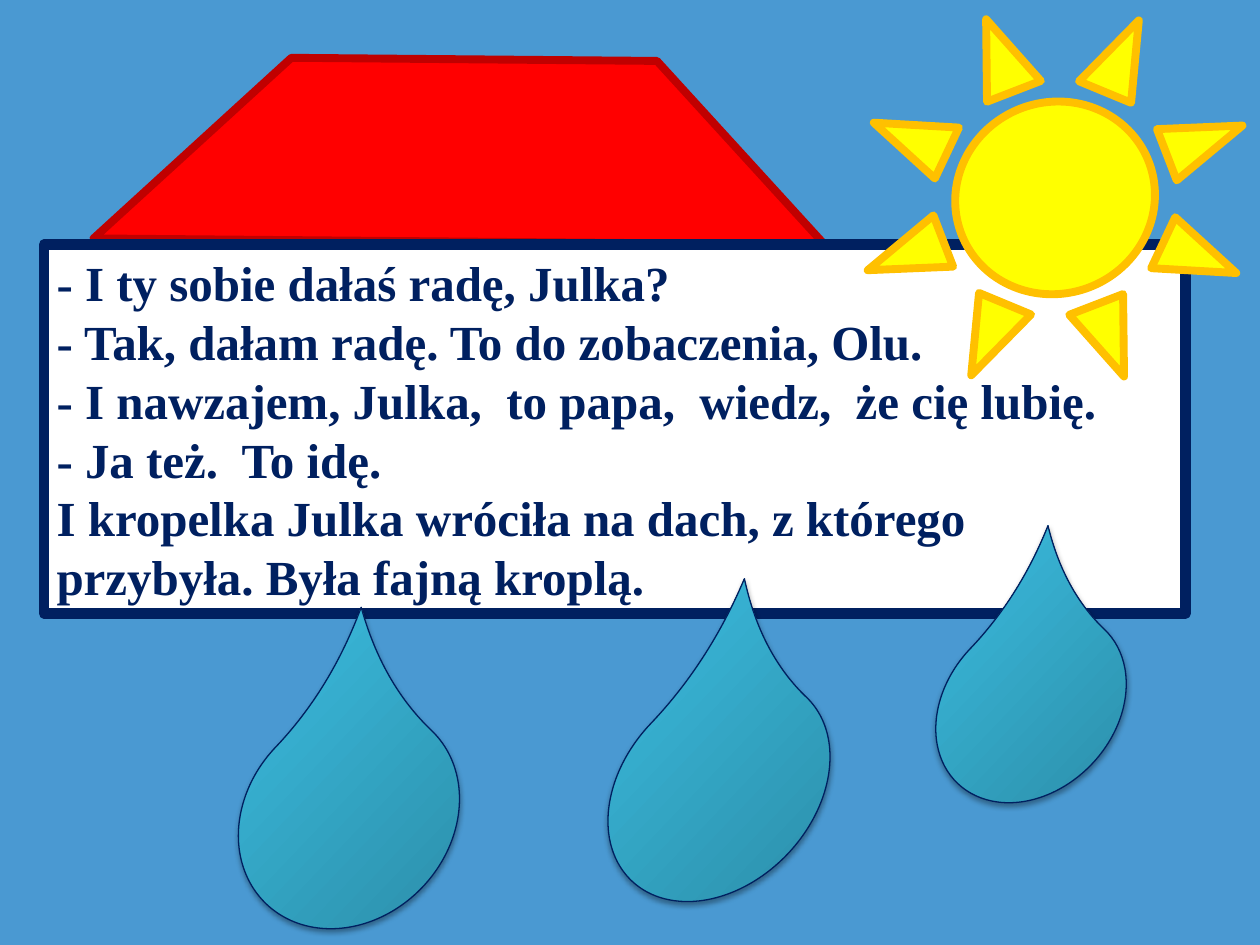
"""Build a slide with a roofed text box, three raindrops and a sun."""
from copy import deepcopy
from typing import NamedTuple

from lxml import etree
from pptx import Presentation
from pptx.dml.color import RGBColor
from pptx.enum.shapes import MSO_SHAPE
from pptx.enum.text import MSO_ANCHOR, MSO_AUTO_SIZE, PP_ALIGN
from pptx.oxml.ns import qn
from pptx.util import Cm, Pt

STRIPE, RECT = MSO_SHAPE.DIAGONAL_STRIPE, MSO_SHAPE.RECTANGLE
TEAR, SUN = MSO_SHAPE.TEAR, MSO_SHAPE.SUN
LEFT, MIDDLE = PP_ALIGN.LEFT, MSO_ANCHOR.MIDDLE
GROW = MSO_AUTO_SIZE.SHAPE_TO_FIT_TEXT

SKY, NAVY, WHITE = "4A99D2", "002060", "FFFFFF"
WATER = [(0, "2A88A2"), (0.8, "37B1D2"), (1, "34B4D6")]
TALK = [
    "- I ty sobie dałaś radę, Julka?",
    "- Tak, dałam radę. To do zobaczenia, Olu.",
    "- I nawzajem, Julka,  to papa,  wiedz,  że cię lubię.",
    "- Ja też.  To idę.",
    "I kropelka Julka wróciła na dach, z którego przybyła. Była fajną kroplą.",
]


class Box(NamedTuple):
    """Place of a shape in centimetres, with its turn in degrees."""
    left: float
    top: float
    width: float
    height: float
    turn: float = 0


ROOF = Box(4.24, -0.53, 10.03, 10.8, 47.6)
WALL = Box(0.89, 4.93, 23.01, 7.44)
DROPS = [
    Box(11.94, 14, 5.11, 3.81, 313.6),
    Box(4.62, 14.43, 4.83, 4.09, 313.6),
    Box(18.64, 12.55, 4.29, 3.38, 313.6),
]
STAR = Box(17.22, 0.13, 8.1, 7.72, 338.9)


def color(code: str) -> RGBColor:
    """Turn a hex string into a colour."""
    return RGBColor.from_string(code)


def draw(slide, kind, box: Box, fill: str, line: str, weight: float):
    """Add a preset shape with a plain fill and outline."""
    shape = slide.shapes.add_shape(kind, *map(Cm, box[:4]))
    shape.rotation = box.turn
    shape.shadow.inherit = False
    shape.fill.solid()
    shape.fill.fore_color.rgb = color(fill)
    shape.line.color.rgb = color(line)
    shape.line.width = Pt(weight)
    return shape


def write(shape, lines: list[str]) -> None:
    """Set the lines of text, one to a paragraph."""
    frame = shape.text_frame
    frame.text = "\n".join(lines)
    frame.word_wrap = True
    frame.auto_size = GROW
    frame.vertical_anchor = MIDDLE
    for para in frame.paragraphs:
        para.alignment = LEFT
        para.font.name = "Times New Roman"
        para.font.size = Pt(28)
        para.font.bold = True
        para.font.color.rgb = color(NAVY)


def shade(shape) -> None:
    """Give a shape a soft shadow straight below it."""
    effects = shape.element.spPr.find(qn("a:effectLst"))
    outer = etree.SubElement(
        effects, qn("a:outerShdw"), blurRad=str(Pt(3.1)), dist=str(Pt(1.8)),
        dir="5400000", rotWithShape="0")
    black = etree.SubElement(outer, qn("a:srgbClr"), val="000000")
    etree.SubElement(black, qn("a:alpha"), val="35000")


def drip(slide, box: Box) -> None:
    """Add a raindrop with a gradient and a shadow."""
    drop = draw(slide, TEAR, box, WATER[0][1], NAVY, 0.75)
    drop.adjustments[0] = 1.34
    drop.fill.gradient()
    drop.fill.gradient_angle = 90
    stops = drop.element.spPr.find(".//" + qn("a:gsLst"))
    stops.append(deepcopy(stops[-1]))
    for stop, (place, code) in zip(drop.fill.gradient_stops, WATER):
        stop.position = place
        stop.color.rgb = color(code)
    shade(drop)


def main() -> None:
    """Build and save the slide."""
    deck = Presentation()
    deck.slide_width, deck.slide_height = Cm(25.4), Cm(19.05)
    slide = deck.slides.add_slide(deck.slide_layouts.get_by_name("Blank"))
    back = slide.background.fill
    back.solid()
    back.fore_color.rgb = color(SKY)
    draw(slide, STRIPE, ROOF, "FF0000", "C00000", 4.5)
    write(draw(slide, RECT, WALL, WHITE, NAVY, 6), TALK)
    for box in DROPS:
        drip(slide, box)
    draw(slide, SUN, STAR, "FFFF00", "FFC000", 4.5)
    deck.save("out.pptx")


if __name__ == "__main__":
    main()
